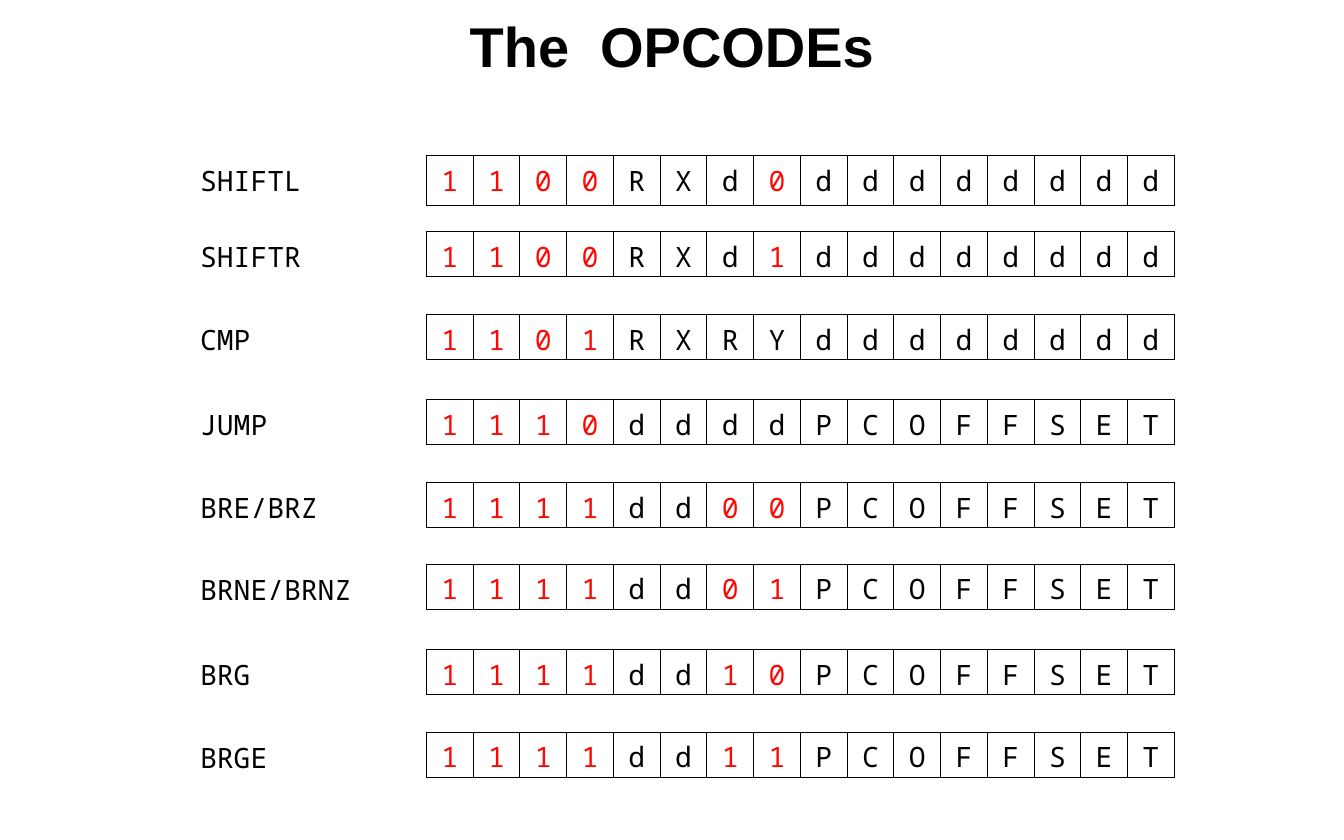
from dataclasses import dataclass

import pptx
import pptx.dml.color
import pptx.enum.text
import pptx.oxml
import pptx.oxml.ns
import pptx.util
from pptx.util import Cm


@dataclass(frozen=True)
class Theme:
    ink: str = "000000"
    fixed_bit: str = "FF0700"
    heading_font: str = "Arial"
    code_font: str = "Noto Sans Mono"
    heading_size: int = 36
    code_size: int = 18
    border_width: float = 0.75


OPCODES = [
    ("SHIFTL", "1100RXd0dddddddd", 3.53, 1.12),
    ("SHIFTR", "1100RXd1dddddddd", 5.26, 1.02),
    ("CMP", "1101RXRYdddddddd", 7.14, 1.02),
    ("JUMP", "1110ddddPCOFFSET", 9.07, 1.02),
    ("BRE/BRZ", "1111dd00PCOFFSET", 10.95, 1.02),
    ("BRNE/BRNZ", "1111dd01PCOFFSET", 12.8, 1.02),
    ("BRG", "1111dd10PCOFFSET", 14.73, 1.02),
    ("BRGE", "1111dd11PCOFFSET", 16.61, 1.02),
]
LABEL_LEFT, WORD_LEFT, BIT_WIDTH = 4.29, 9.67, 1.06
CHARACTER_WIDTH, SIDE_INSET, TOP_INSET, BOTTOM_INSET = 0.4, 0.25, 0.13, 0.02


class OpcodeSlide:
    def __init__(self, slide, theme):
        self.slide = slide
        self.theme = theme

    def style(self, paragraph, font_name, size, color, bold=False):
        for run in paragraph.runs:
            run.font.name = font_name
            run.font.size = pptx.util.Pt(size)
            run.font.bold = bold
            run.font.color.rgb = pptx.dml.color.RGBColor.from_string(color)

    def inset(self, area, top, bottom):
        area.margin_left = area.margin_right = Cm(SIDE_INSET)
        area.margin_top, area.margin_bottom = Cm(top), Cm(bottom)

    def title(self, wording):
        heading = self.slide.shapes.title
        heading.left, heading.top = Cm(2.54), Cm(0.08)
        heading.width, heading.height = Cm(25.4), Cm(1.9)
        frame = heading.text_frame
        frame.text = wording
        frame.vertical_anchor = pptx.enum.text.MSO_ANCHOR.MIDDLE
        self.inset(frame, SIDE_INSET, SIDE_INSET)
        frame.paragraphs[0].alignment = pptx.enum.text.PP_ALIGN.CENTER
        self.style(frame.paragraphs[0], self.theme.heading_font,
                   self.theme.heading_size, self.theme.ink, bold=True)

    def mnemonic(self, name, top):
        width = len(name) * CHARACTER_WIDTH + 2 * SIDE_INSET
        label = self.slide.shapes.add_textbox(
            Cm(LABEL_LEFT), Cm(top), Cm(width), Cm(1.02))
        frame = label.text_frame
        frame.text = name
        frame.word_wrap = False
        frame.auto_size = pptx.enum.text.MSO_AUTO_SIZE.NONE
        self.inset(frame, TOP_INSET, BOTTOM_INSET)
        paragraph = frame.paragraphs[0]
        paragraph.alignment = pptx.enum.text.PP_ALIGN.LEFT
        self.style(paragraph, self.theme.code_font,
                   self.theme.code_size, self.theme.ink)

    def border(self, cell):
        properties = cell._tc.get_or_add_tcPr()
        width = pptx.util.Pt(self.theme.border_width)
        for side in ("lnL", "lnR", "lnT", "lnB"):
            properties.append(pptx.oxml.parse_xml(
                f'<a:{side} {pptx.oxml.ns.nsdecls("a")} w="{int(width)}">'
                f'<a:solidFill><a:srgbClr val="{self.theme.ink}"/></a:solidFill>'
                f'</a:{side}>'))

    def instruction_word(self, bits, top, height):
        word = self.slide.shapes.add_table(
            1, len(bits), Cm(WORD_LEFT), Cm(top),
            Cm(BIT_WIDTH * len(bits)), Cm(height)).table
        word.first_row = word.horz_banding = False
        for column, bit in enumerate(bits):
            word.columns[column].width = Cm(BIT_WIDTH)
            cell = word.cell(0, column)
            self.border(cell)
            cell.fill.background()
            self.inset(cell, TOP_INSET, BOTTOM_INSET)
            paragraph = cell.text_frame.paragraphs[0]
            paragraph.text = bit
            paragraph.alignment = pptx.enum.text.PP_ALIGN.CENTER
            color = self.theme.fixed_bit if bit.isdigit() else self.theme.ink
            self.style(paragraph, self.theme.code_font,
                       self.theme.code_size, color)


def main():
    presentation = pptx.Presentation()
    presentation.slide_width, presentation.slide_height = Cm(30.48), Cm(19.05)
    title_only = presentation.slide_layouts[5]
    page = OpcodeSlide(presentation.slides.add_slide(title_only), Theme())
    page.title("The  OPCODEs")
    for name, bits, top, height in OPCODES:
        page.instruction_word(bits, top, height)
        page.mnemonic(name, top + 0.05)
    presentation.save("out.pptx")


if __name__ == "__main__":
    main()
